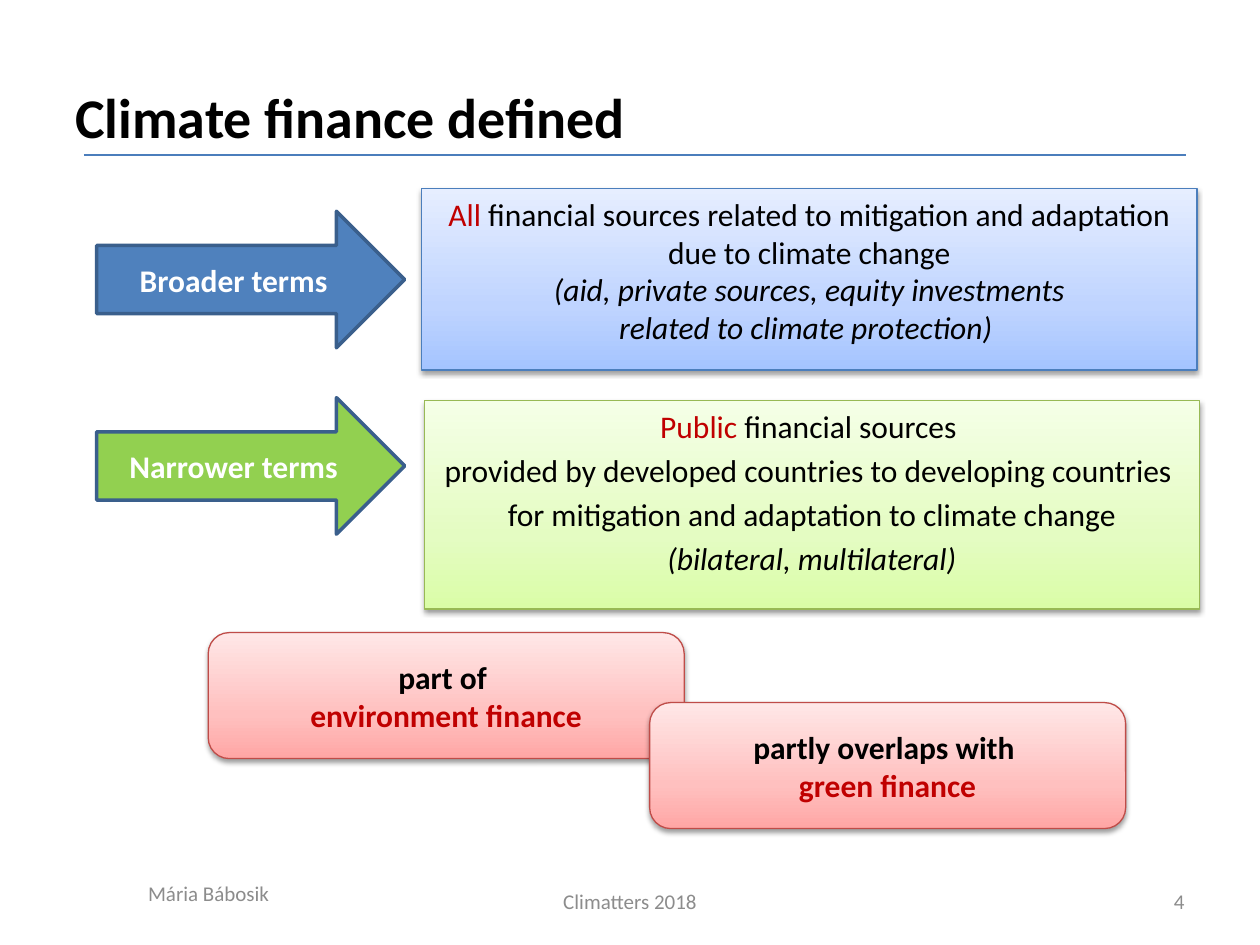
from copy import deepcopy

from lxml.etree import SubElement
from pptx import Presentation
from pptx.dml.color import RGBColor
from pptx.enum.shapes import MSO_CONNECTOR, MSO_SHAPE
from pptx.enum.text import MSO_ANCHOR, PP_ALIGN
from pptx.oxml.ns import qn
from pptx.util import Pt

BLACK, WHITE, RED, GRAY = "000000", "FFFFFF", "C00000", "8C8C8C"
BLUE_LINE, ARROW_LINE = "4B7EBC", "3A5F8C"
BLUE_STOPS = ("A4C4FF", "BFD4FF", "E6EEFF")
GREEN_STOPS = ("DAFDA7", "E4FCC2", "F5FFE7")
PINK_STOPS = ("FFA6A5", "FFC0BF", "FFE7E7")


def color(value):
    return RGBColor.from_string(value)


class SlideBuilder:
    font_name = "Calibri"
    body_size = 18
    stop_positions = (0, 0.35, 1)

    def __init__(self, slide):
        self.slide = slide

    def add_text(self, shape, paragraphs, size=body_size, align=PP_ALIGN.CENTER,
                 anchor=MSO_ANCHOR.MIDDLE, bold=False, space_before=0):
        frame = shape.text_frame
        frame.word_wrap = True
        frame.vertical_anchor = anchor
        for index, (runs, italic) in enumerate(paragraphs):
            paragraph = frame.add_paragraph() if index else frame.paragraphs[0]
            paragraph.alignment = align
            paragraph.space_before = Pt(space_before)
            font = paragraph.font
            font.name, font.size = self.font_name, Pt(size)
            font.bold, font.italic = bold, italic
            for text, text_color in runs:
                run = paragraph.add_run()
                run.text = text
                run.font.color.rgb = color(text_color)

    def label(self, box, text, size=12, text_color=GRAY, **style):
        shape = self.slide.shapes.add_textbox(*map(Pt, box))
        self.add_text(shape, [([(text, text_color)], False)], size, **style)

    def outlined(self, kind, box, line_color, line_width):
        shape = self.slide.shapes.add_shape(kind, *map(Pt, box))
        shape.shadow.inherit = False
        shape.line.color.rgb = color(line_color)
        shape.line.width = Pt(line_width)
        return shape

    def arrow(self, box, text, fill_color):
        shape = self.outlined(MSO_SHAPE.RIGHT_ARROW, box, ARROW_LINE, 2)
        shape.fill.solid()
        shape.fill.fore_color.rgb = color(fill_color)
        self.add_text(shape, [([(text, WHITE)], False)], bold=True)

    def panel(self, kind, box, stops, line_color, paragraphs, **style):
        shape = self.outlined(kind, box, line_color, 0.75)
        self.add_gradient(shape, stops)
        self.add_shadow(shape)
        self.add_text(shape, paragraphs, **style)

    def add_gradient(self, shape, stops):
        shape.fill.gradient()
        shape.fill.gradient_angle = 90
        stop_list = shape._element.spPr.find(".//" + qn("a:gsLst"))
        stop_list.append(deepcopy(stop_list[0]))
        gradient_stops = shape.fill.gradient_stops
        for stop, position, value in zip(gradient_stops, self.stop_positions, stops):
            stop.position = position
            stop.color.rgb = color(value)

    def add_shadow(self, shape):
        effects = shape._element.spPr.find(qn("a:effectLst"))
        shadow = SubElement(effects, qn("a:outerShdw"), blurRad=str(Pt(3.1)),
                            dist=str(Pt(1.6)), dir="5400000", rotWithShape="0")
        shade = SubElement(shadow, qn("a:srgbClr"), val=BLACK)
        SubElement(shade, qn("a:alpha"), val="38000")

    def rule(self, left, right, top):
        line = self.slide.shapes.add_connector(
            MSO_CONNECTOR.STRAIGHT, Pt(left), Pt(top), Pt(right), Pt(top))
        line.line.color.rgb = color(BLUE_LINE)
        line.line.width = Pt(0.75)
        SubElement(line._element.spPr, qn("a:effectLst"))


def main():
    presentation = Presentation()
    presentation.slide_width, presentation.slide_height = Pt(720), Pt(540)
    builder = SlideBuilder(presentation.slides.add_slide(presentation.slide_layouts[6]))

    builder.label((36, 21.6, 648, 90), "Climate finance defined", 32, BLACK,
                  align=PP_ALIGN.LEFT, bold=True)
    builder.label((516, 500.5, 168, 28.75), "4", align=PP_ALIGN.RIGHT)

    builder.panel(MSO_SHAPE.RECTANGLE, (242.5, 229, 443, 119), GREEN_STOPS, "98B955", [
        ([("Public", RED), (" financial sources ", BLACK)], False),
        ([("provided by developed countries to developing countries ", BLACK)], False),
        ([("for mitigation and adaptation to climate change", BLACK)], False),
        ([("(bilateral, multilateral)", BLACK)], True),
    ], anchor=MSO_ANCHOR.TOP, space_before=3.6)
    builder.panel(MSO_SHAPE.RECTANGLE, (241, 107.75, 443, 103.75), BLUE_STOPS, BLUE_LINE, [
        ([("All ", RED), ("financial sources related to mitigation and adaptation "
                          "due to climate change", BLACK)], False),
        ([("(aid, private sources, equity investments", BLACK)], True),
        ([("related to climate protection) ", BLACK)], True),
    ], anchor=MSO_ANCHOR.TOP)

    for top, text, fill_color in ((227.25, "Narrower terms", "92D050"),
                                  (120.75, "Broader terms", "4F81BD")):
        builder.arrow((55.25, top, 176, 78), text, fill_color)
    builder.rule(48, 677.5, 88.5)

    for left, top, lead, topic in (
            (119, 361.5, "part of ", "environment finance"),
            (371.25, 401.5, "partly overlaps with ", "green finance")):
        builder.panel(MSO_SHAPE.ROUNDED_RECTANGLE, (left, top, 272, 72), PINK_STOPS,
                      "BF4C48", [([(lead, BLACK)], False), ([(topic, RED)], False)],
                      bold=True)

    builder.label((54, 491.25, 130.5, 38.25), "Mária Bábosik")
    builder.label((246, 500.5, 228, 28.75), "Climatters 2018")
    presentation.save("out.pptx")


if __name__ == "__main__":
    main()
